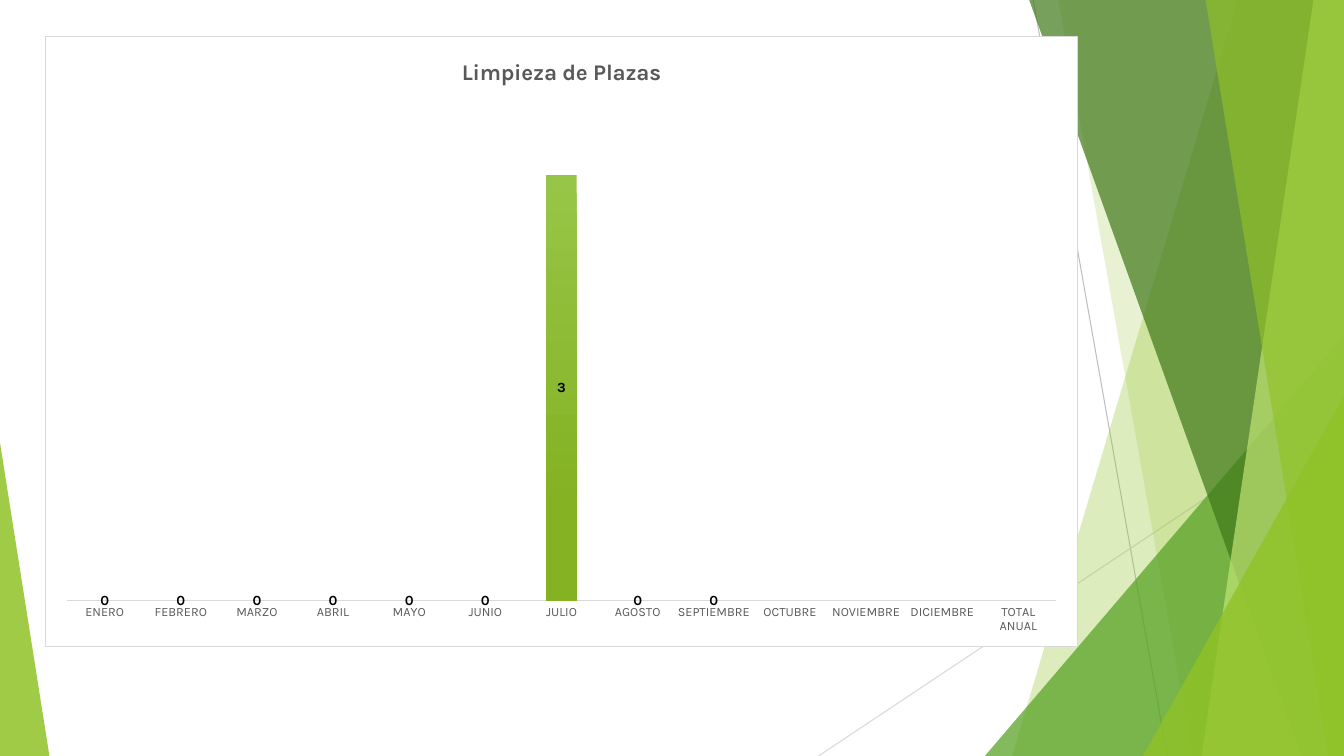
from lxml import etree
from pptx import Presentation
from pptx.chart.data import CategoryChartData
from pptx.dml.color import RGBColor
from pptx.enum.chart import XL_CHART_TYPE as ChartType, XL_LABEL_POSITION as LabelPosition
from pptx.enum.chart import XL_TICK_MARK as TickMark
from pptx.enum.shapes import MSO_CONNECTOR as Connector, MSO_SHAPE as Shape
from pptx.oxml import parse_xml
from pptx.oxml.ns import nsdecls, qn
from pptx.util import Inches, Pt

WIDTH, HEIGHT = Inches(13.33), Inches(7.5)
FONT = "Karla"
BLACK = RGBColor(0x00, 0x00, 0x00)
GREY = RGBColor(0x59, 0x59, 0x59)
LINE_GREY = RGBColor(0xBF, 0xBF, 0xBF)
PALE_GREY = RGBColor(0xD9, 0xD9, 0xD9)
LIME = RGBColor(0x90, 0xC2, 0x26)
LIGHT_LIME = RGBColor(0xC0, 0xE4, 0x74)
GREEN = RGBColor(0x54, 0xA0, 0x21)
DARK_GREEN = RGBColor(0x3F, 0x78, 0x19)
BAR_TOP = RGBColor(0x97, 0xC5, 0x47)
BAR_BOTTOM = RGBColor(0x84, 0xB2, 0x23)

MONTHS = ["ENERO", "FEBRERO", "MARZO", "ABRIL", "MAYO", "JUNIO", "JULIO", "AGOSTO",
          "SEPTIEMBRE", "OCTUBRE", "NOVIEMBRE", "DICIEMBRE", "TOTAL ANUAL"]
CLEANINGS = [0, 0, 0, 0, 0, 0, 3, 0, 0, None, None, None, None]


def across(percent):
    return round(WIDTH * percent / 100)


def down(percent):
    return round(HEIGHT * percent / 100)


def style_font(font, size, color, bold=False):
    font.name, font.size, font.bold = FONT, Pt(size), bold
    font.color.rgb = color


def write_text(frame, text, **style):
    para = frame.paragraphs[0]
    span = para.add_run()
    span.text = text
    style_font(span.font, **style)


def paint(shape, color, opacity):
    shape.shadow.inherit = False
    shape.fill.solid()
    shape.fill.fore_color.rgb = color
    shape.line.fill.background()
    rgb = shape.fill._xPr.find(qn("a:solidFill"))[0]
    etree.SubElement(rgb, qn("a:alpha")).set("val", str(opacity * 1000))


def add_line(page, start, end, color):
    line = page.shapes.add_connector(Connector.STRAIGHT, across(start[0]), down(start[1]),
                                     across(end[0]), down(end[1]))
    line.line.color.rgb = color
    line.line.width = Pt(0.75)
    etree.SubElement(line._element.spPr, qn("a:effectLst"))


def add_band(page, top, bottom, color, opacity):
    """Full-height band from a slanted left edge to the slide's right edge."""
    builder = page.shapes.build_freeform(across(top), 0)
    builder.add_line_segments([(WIDTH, 0), (WIDTH, HEIGHT), (across(bottom), HEIGHT)])
    paint(builder.convert_to_shape(), color, opacity)


def add_corner(page, left, top, right, apex, color, opacity):
    """Triangle that stands on the slide's bottom edge."""
    corner = page.shapes.add_shape(Shape.ISOSCELES_TRIANGLE, across(left), down(top),
                                   across(right - left), down(100 - top))
    corner.adjustments[0] = apex
    paint(corner, color, opacity)


def add_backdrop(page):
    add_line(page, (76.88, 0), (86.85, 100), LINE_GREY)
    add_line(page, (100, 53.73), (60.9, 100), PALE_GREY)
    add_band(page, 92.1, 75.3, LIME, 30)
    add_band(page, 78.75, 88.73, LIME, 20)
    add_corner(page, 73.28, 44.4, 100, 1, GREEN, 72)
    add_band(page, 76.58, 96.83, DARK_GREEN, 70)
    add_band(page, 97.73, 89.4, LIGHT_LIME, 70)
    add_band(page, 89.7, 98.85, LIME, 65)
    add_corner(page, 85.05, 52.4, 100, 1, LIME, 80)
    add_corner(page, 0, 58.53, 3.68, 0, LIME, 85)


def frame_chart(chart):
    """White ground, thin border and a fixed plot area."""
    space = chart._chartSpace
    space.find(qn("c:chart")).addnext(parse_xml(
        f'<c:spPr {nsdecls("c", "a")}>'
        '<a:solidFill><a:srgbClr val="FFFFFF"/></a:solidFill>'
        f'<a:ln w="{Pt(0.75)}"><a:solidFill><a:srgbClr val="{PALE_GREY}"/></a:solidFill></a:ln>'
        '</c:spPr>'))
    plot_area = space.find(".//" + qn("c:plotArea"))
    for layout in plot_area.findall(qn("c:layout")):
        plot_area.remove(layout)
    plot_area.insert(0, parse_xml(
        f'<c:layout {nsdecls("c")}><c:manualLayout><c:layoutTarget val="inner"/>'
        '<c:xMode val="edge"/><c:yMode val="edge"/><c:x val="0.02"/><c:y val="0.11"/>'
        '<c:w val="0.96"/><c:h val="0.815"/></c:manualLayout></c:layout>'))


def add_cleaning_chart(page):
    data = CategoryChartData()
    data.categories = MONTHS
    data.add_series("Series 1", CLEANINGS)
    chart = page.shapes.add_chart(ChartType.COLUMN_STACKED, across(3.38), down(4.8),
                                  across(76.8), down(80.8), data).chart
    style_font(chart.font, 10, BLACK)
    chart.has_legend = False
    frame_chart(chart)

    # Title
    write_text(chart.chart_title.text_frame, "Limpieza de Plazas", size=16, color=GREY, bold=True)
    chart.chart_title.include_in_layout = False

    # Axes
    months = chart.category_axis
    months.major_tick_mark = months.minor_tick_mark = TickMark.NONE
    months.format.line.color.rgb = PALE_GREY
    months.format.line.width = Pt(1)
    style_font(months.tick_labels.font, 9, GREY)
    scale = chart.value_axis
    scale.minimum_scale, scale.maximum_scale = 0, 3.5
    scale.has_major_gridlines = False
    scale.visible = False

    # Columns
    plot = chart.plots[0]
    plot.gap_width, plot.overlap, plot.vary_by_categories = 150, 100, False
    series = plot.series[0]
    fill = series.format.fill
    fill.gradient()
    fill.gradient_angle = 270
    for stop, color, position in zip(fill.gradient_stops, (BAR_TOP, BAR_BOTTOM), (0, 0.78)):
        stop.color.rgb, stop.position = color, position
    labels = series.data_labels
    labels.show_value = True
    labels.position = LabelPosition.CENTER
    style_font(labels.font, 10, BLACK, bold=True)


def main():
    deck = Presentation()
    deck.slide_width, deck.slide_height = WIDTH, HEIGHT
    page = deck.slides.add_slide(deck.slide_layouts[6])
    add_backdrop(page)
    add_cleaning_chart(page)
    deck.save("out.pptx")


if __name__ == "__main__":
    main()
